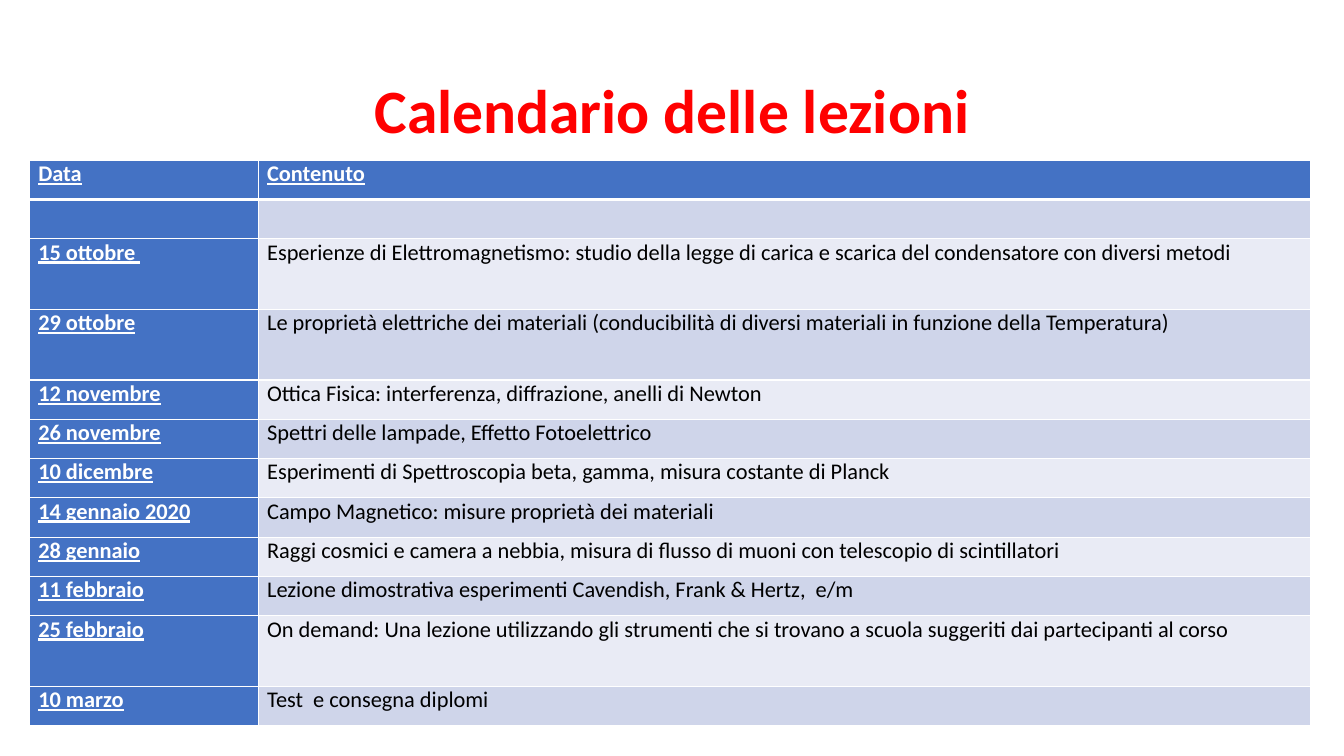
"""Build the slide with the calendar of lessons."""
import pptx
import pptx.dml.color
import pptx.enum.text
import pptx.oxml
import pptx.oxml.ns
import pptx.util

Inches = pptx.util.Inches
Pt = pptx.util.Pt


def paint(target, color):
    """Give a font or a cell a solid colour."""
    target.fill.solid()
    target.fill.fore_color.rgb = pptx.dml.color.RGBColor.from_string(color)


def border(cell, side, width):
    """Draw one white edge of a cell."""
    cell._tc.get_or_add_tcPr().append(pptx.oxml.parse_xml(
        f'<a:ln{side} {pptx.oxml.ns.nsdecls("a")} w="{Pt(width)}"><a:solidFill>'
        f'<a:srgbClr val="FFFFFF"/></a:solidFill></a:ln{side}>'))


lessons = [
    ("Data", "Contenuto"),
    ("", ""),
    ("15 ottobre ", "Esperienze di Elettromagnetismo: studio della legge di carica "
     "e scarica del condensatore con diversi metodi"),
    ("29 ottobre", "Le proprietà elettriche dei materiali (conducibilità di diversi "
     "materiali in funzione della Temperatura)"),
    ("12 novembre", "Ottica Fisica: interferenza, diffrazione, anelli di Newton"),
    ("26 novembre", "Spettri delle lampade, Effetto Fotoelettrico"),
    ("10 dicembre", "Esperimenti di Spettroscopia beta, gamma, misura costante di Planck"),
    ("14 gennaio 2020", "Campo Magnetico: misure proprietà dei materiali"),
    ("28 gennaio", "Raggi cosmici e camera a nebbia, misura di flusso di muoni con "
     "telescopio di scintillatori"),
    ("11 febbraio", "Lezione dimostrativa esperimenti Cavendish, Frank & Hertz,  e/m"),
    ("25 febbraio", "On demand: Una lezione utilizzando gli strumenti che si trovano "
     "a scuola suggeriti dai partecipanti al corso"),
    ("10 marzo", "Test  e consegna diplomi"),
]
tall = {2, 3, 10}
bands = ["E9EBF5", "CFD5EA"]

deck = pptx.Presentation()
deck.slide_width, deck.slide_height = Inches(13.33), Inches(7.5)
slide = deck.slides.add_slide(deck.slide_layouts[5])

title = slide.shapes.title
title.left, title.top = Inches(0.92), Inches(0.4)
title.width, title.height = Inches(11.5), Inches(1.45)
title.text_frame.text = "Calendario delle lezioni"
title.text_frame.vertical_anchor = pptx.enum.text.MSO_ANCHOR.MIDDLE
line = title.text_frame.paragraphs[0]
line.alignment = pptx.enum.text.PP_ALIGN.CENTER
line.line_spacing = 0.9
font = line.runs[0].font
font.name, font.size, font.bold = "Calibri", Pt(44), True
paint(font, "FF0000")

table = slide.shapes.add_table(len(lessons), 2, Inches(0.29), Inches(1.59),
                               Inches(12.71), Inches(5.61)).table
table.first_col = True
table.columns[0].width = Inches(2.27)
table.columns[1].width = Inches(10.44)

for row, lesson in enumerate(lessons):
    table.rows[row].height = Inches(0.7 if row in tall else 0.39)
    for col, text in enumerate(lesson):
        cell = table.cell(row, col)
        head = row == 0 or col == 0
        cell.margin_left = cell.margin_right = Inches(0.09)
        cell.margin_top = cell.margin_bottom = 0
        border(cell, "L", 1)
        border(cell, "R", 1)
        border(cell, "T", 3 if row == 1 else 1)
        border(cell, "B", 3 if row == 0 else 1)
        paint(cell, "4472C4" if head else bands[row % 2])
        cell.text_frame.text = text
        for run in cell.text_frame.paragraphs[0].runs:
            font = run.font
            font.name, font.size = "Calibri", Pt(16)
            font.bold = font.underline = head
            paint(font, "FFFFFF" if head else "000000")

deck.save("out.pptx")
